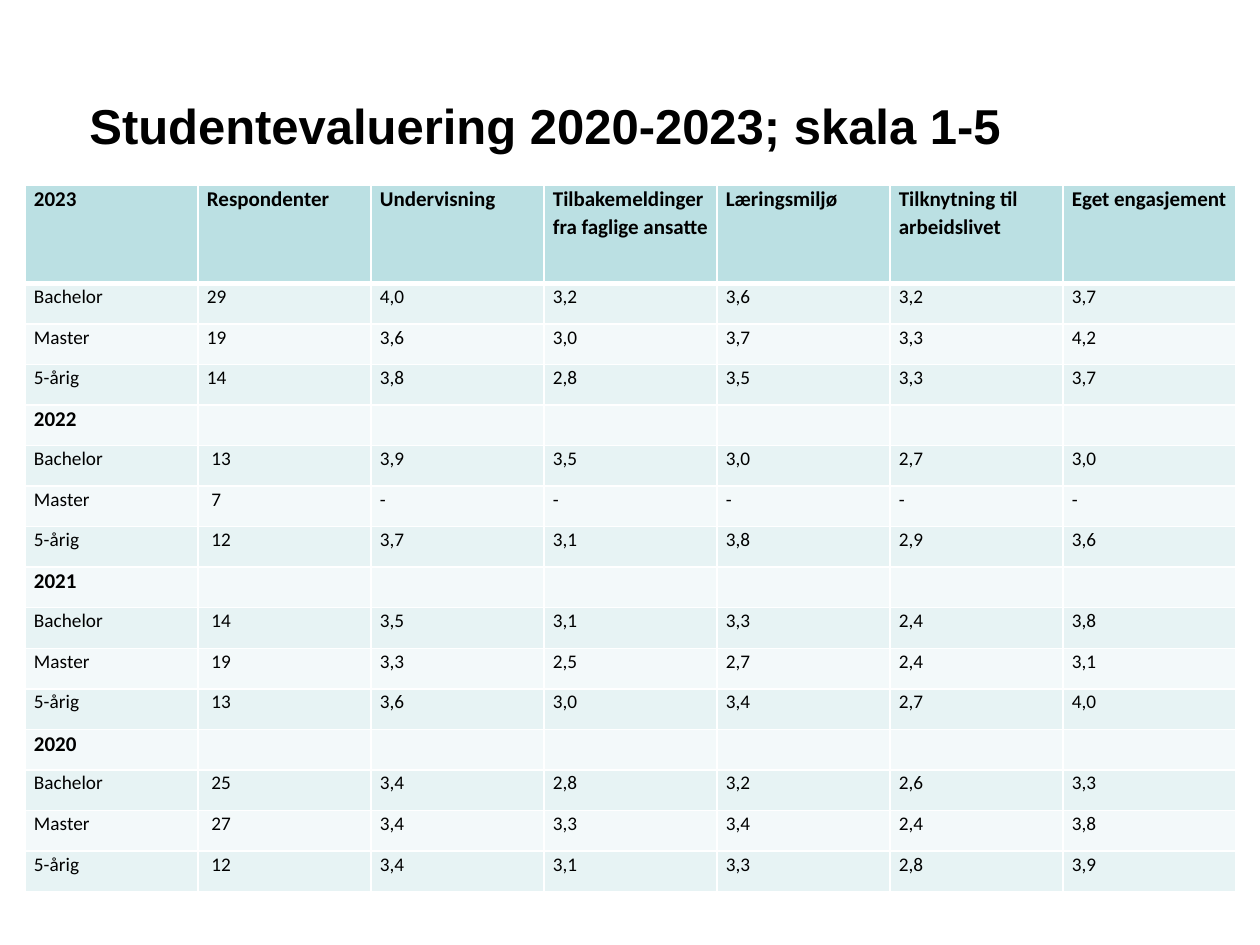
import dataclasses

import lxml.etree
import pptx
import pptx.dml.color
import pptx.enum.text
import pptx.oxml.ns
import pptx.util


@dataclasses.dataclass(frozen=True)
class Theme:
    title_font: str = "Arial"
    table_font: str = "Calibri"
    ink: str = "000000"
    border: str = "FFFFFF"
    header_fill: str = "BBE0E3"
    band_fills: tuple = ("F3F9FA", "E7F3F4")
    title_size: int = 28
    heading_size: int = 12
    body_size: int = 11
    thin: int = 1
    thick: int = 3


THEME = Theme()
SLIDE_WIDTH, SLIDE_HEIGHT = 10, 7.5
TABLE_LEFT, TABLE_TOP, TABLE_WIDTH, TABLE_HEIGHT = 0.2, 1.47, 9.61, 5.61
HEADER_HEIGHT = 0.78

TITLE = "Studentevaluering 2020-2023; skala 1-5"
HEADER = ("2023", "Respondenter", "Undervisning", "Tilbakemeldinger fra faglige ansatte",
          "Læringsmiljø", "Tilknytning til arbeidslivet", "Eget engasjement")
PROGRAMMES = ("Bachelor", "Master", "5-årig")
RESULTS = {
    "2023": (("29", "4,0", "3,2", "3,6", "3,2", "3,7"),
             ("19", "3,6", "3,0", "3,7", "3,3", "4,2"),
             ("14", "3,8", "2,8", "3,5", "3,3", "3,7")),
    "2022": ((" 13", "3,9", "3,5", "3,0", "2,7", "3,0"),
             (" 7", "-", "-", "-", "-", "-"),
             (" 12", "3,7", "3,1", "3,8", "2,9", "3,6")),
    "2021": ((" 14", "3,5", "3,1", "3,3", "2,4", "3,8"),
             (" 19", "3,3", "2,5", "2,7", "2,4", "3,1"),
             (" 13", "3,6", "3,0", "3,4", "2,7", "4,0")),
    "2020": ((" 25", "3,4", "2,8", "3,2", "2,6", "3,3"),
             (" 27", "3,4", "3,3", "3,4", "2,4", "3,8"),
             (" 12", "3,4", "3,1", "3,3", "2,8", "3,9")),
}


def table_rows():
    """Give each row as its texts and whether it is a year heading."""
    rows = []
    for year, results in RESULTS.items():
        heading = HEADER if year == HEADER[0] else (year,) + ("",) * (len(HEADER) - 1)
        rows.append((heading, True))
        rows += [((name, *values), False) for name, values in zip(PROGRAMMES, results)]
    return rows


def write_text(frame, text, *, font, size, bold=False, line_spacing=None, space_after=None):
    para = frame.paragraphs[0]
    para.alignment = pptx.enum.text.PP_ALIGN.LEFT
    para.line_spacing = line_spacing
    if space_after is not None:
        para.space_after = pptx.util.Pt(space_after)
    if not text:
        end = lxml.etree.SubElement(para._p, pptx.oxml.ns.qn("a:endParaRPr"))
        end.set("sz", str(size * 100))
        return
    span = para.add_run()
    span.text = text
    span.font.name = font
    span.font.size = pptx.util.Pt(size)
    span.font.bold = bold
    span.font.color.rgb = pptx.dml.color.RGBColor.from_string(THEME.ink)


def set_borders(cell, top, bottom):
    """Draw all four sides; the side lines must precede the fill in the cell's XML."""
    properties = cell._tc.get_or_add_tcPr()
    widths = {"lnL": THEME.thin, "lnR": THEME.thin, "lnT": top, "lnB": bottom}
    for index, (side, width) in enumerate(widths.items()):
        line = lxml.etree.Element(pptx.oxml.ns.qn(f"a:{side}"), w=str(pptx.util.Pt(width)))
        fill = lxml.etree.SubElement(line, pptx.oxml.ns.qn("a:solidFill"))
        lxml.etree.SubElement(fill, pptx.oxml.ns.qn("a:srgbClr"), val=THEME.border)
        properties.insert(index, line)


def format_cell(cell, text, row_index, is_heading):
    cell.margin_left = cell.margin_right = pptx.util.Inches(0.07)
    cell.margin_top = cell.margin_bottom = 0
    color = THEME.band_fills[row_index % 2] if row_index else THEME.header_fill
    cell.fill.solid()
    cell.fill.fore_color.rgb = pptx.dml.color.RGBColor.from_string(color)
    set_borders(cell,
                top=THEME.thick if row_index == 1 else THEME.thin,
                bottom=THEME.thick if row_index == 0 else THEME.thin)
    write_text(cell.text_frame, text, font=THEME.table_font, bold=is_heading,
               size=THEME.heading_size if is_heading else THEME.body_size,
               line_spacing=1.07, space_after=8)


def add_title(page):
    title = page.shapes.title
    title.left, title.top, title.width, title.height = map(
        pptx.util.Inches, (0.61, 0.41, 9.02, 1.17))
    title.text_frame.vertical_anchor = pptx.enum.text.MSO_ANCHOR.MIDDLE
    write_text(title.text_frame, TITLE, font=THEME.title_font, size=THEME.title_size, bold=True)


def add_results_table(page):
    rows = table_rows()
    box = page.shapes.add_table(len(rows), len(HEADER), *map(
        pptx.util.Inches, (TABLE_LEFT, TABLE_TOP, TABLE_WIDTH, TABLE_HEIGHT)))
    table = box.table
    table.horz_banding = False
    body_height = (TABLE_HEIGHT - HEADER_HEIGHT) / (len(rows) - 1)
    for row_index, (texts, is_heading) in enumerate(rows):
        height = body_height if row_index else HEADER_HEIGHT
        table.rows[row_index].height = pptx.util.Inches(height)
        for column_index, text in enumerate(texts):
            format_cell(table.cell(row_index, column_index), text, row_index, is_heading)


def main():
    deck = pptx.Presentation()
    deck.slide_width = pptx.util.Inches(SLIDE_WIDTH)
    deck.slide_height = pptx.util.Inches(SLIDE_HEIGHT)
    page = deck.slides.add_slide(deck.slide_layouts.get_by_name("Title Only"))
    add_title(page)
    add_results_table(page)
    deck.save("out.pptx")


if __name__ == "__main__":
    main()
